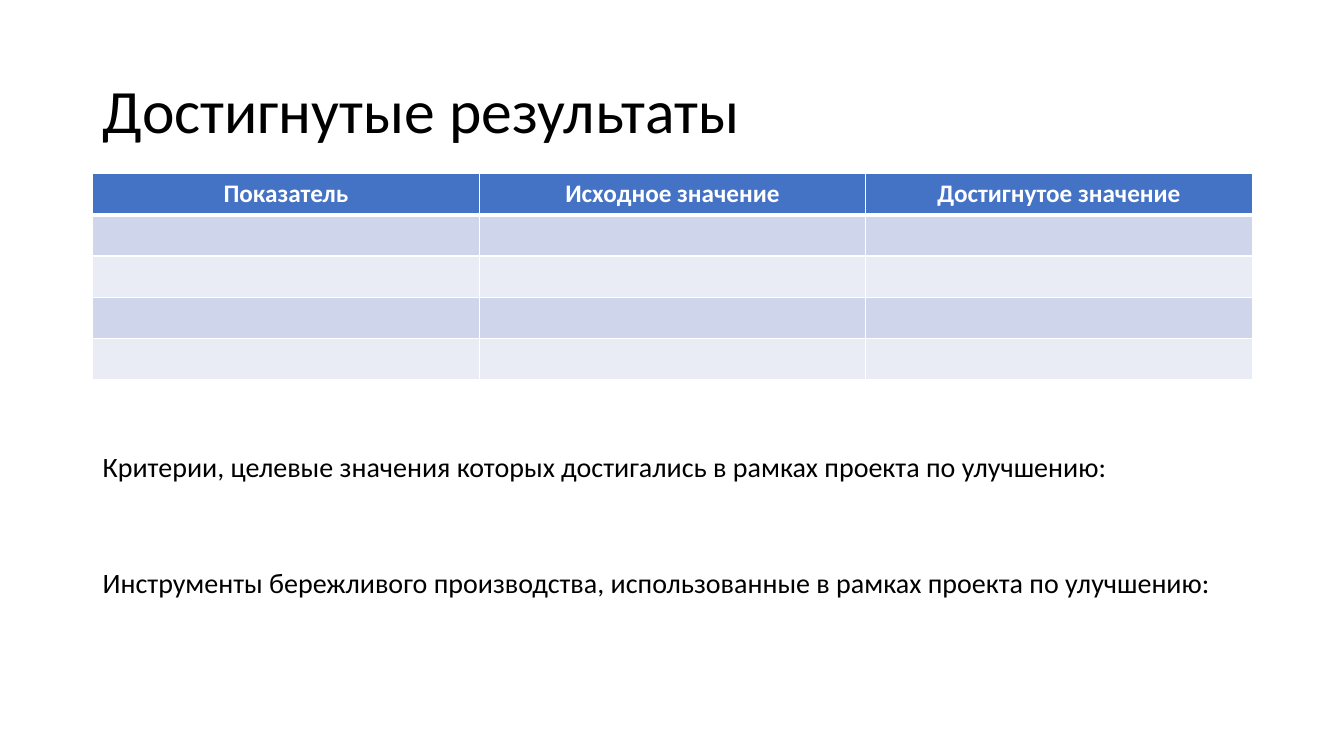
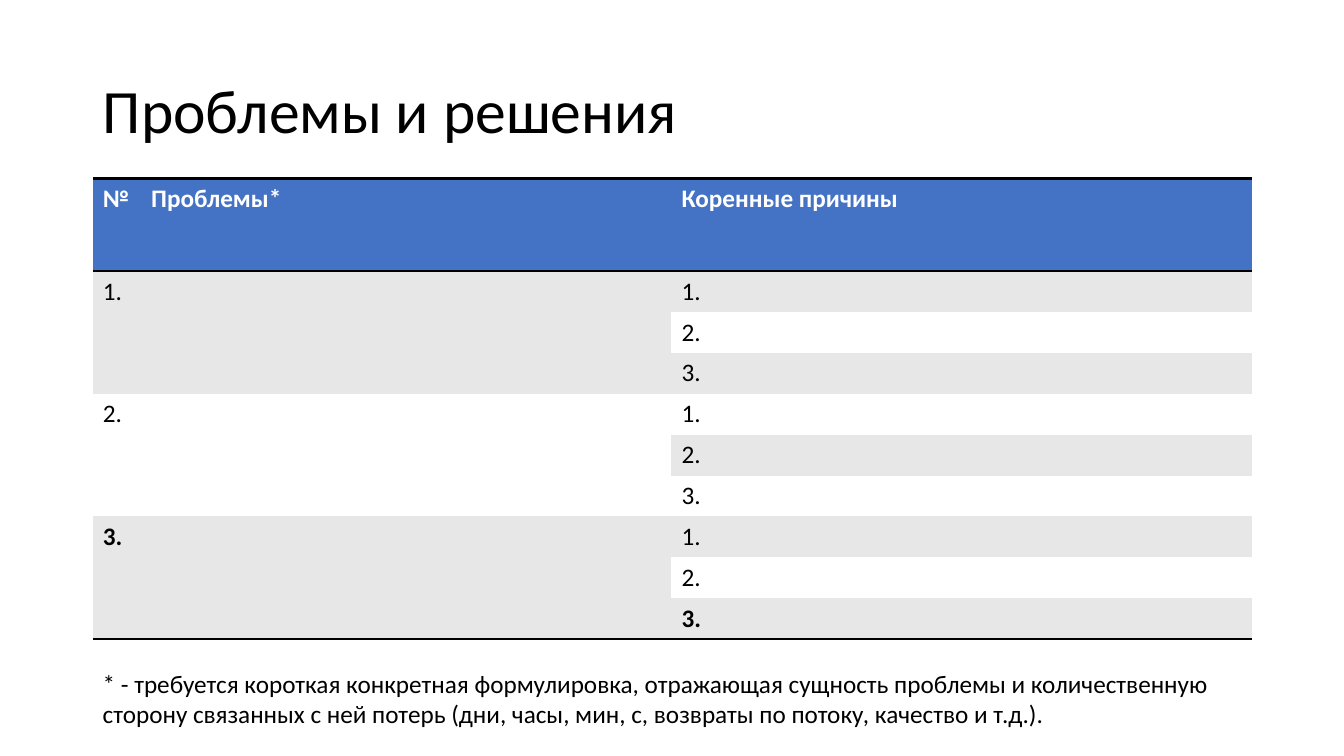
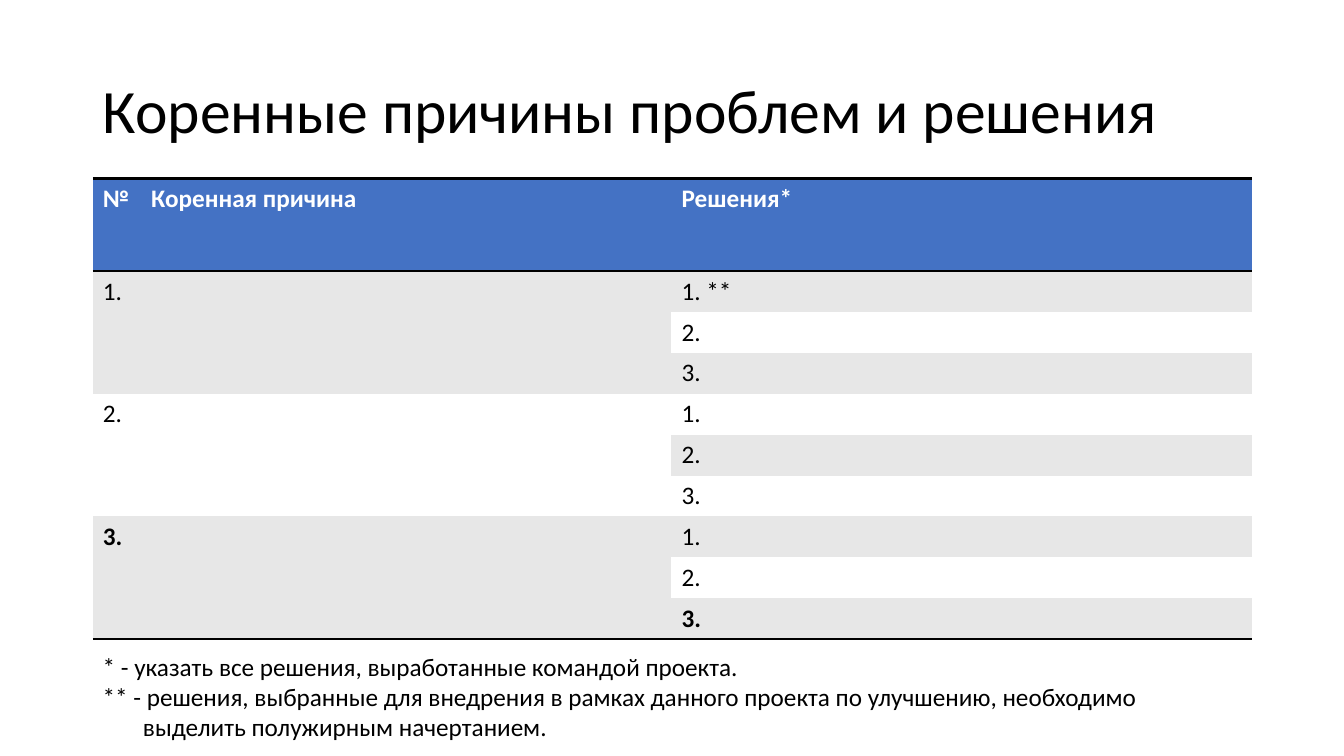
from dataclasses import dataclass
from lxml.etree import SubElement
from pptx import Presentation
from pptx.dml.color import RGBColor
from pptx.enum.text import MSO_ANCHOR, MSO_AUTO_SIZE, PP_ALIGN
from pptx.oxml.ns import qn
from pptx.util import Inches, Pt


@dataclass(frozen=True)
class Theme:
    font: str = "Calibri"
    black: str = "000000"
    white: str = "FFFFFF"
    blue: str = "4472C4"
    gray: str = "E7E7E7"
    band: tuple = ("CFD5EA", "E9EBF5")
    title: int = 44
    lead: int = 20
    text: int = 18
    left: float = 0.92
    width: float = 11.5
    plain: str = "{2D5ABB26-0587-4C30-8999-92F81FD0307C}"


T = Theme()

# Content
RESULTS = {
    "title": "Достигнутые результаты",
    "head": ["Показатель", "Исходное значение", "Достигнутое значение"],
    "rows": 4,
    "notes": [
        (4.41, 0.77, "Критерии, целевые значения которых достигались "
                     "в рамках проекта по улучшению:"),
        (5.56, 0.44, "Инструменты бережливого производства, использованные "
                     "в рамках проекта по улучшению:"),
    ],
}
CAUSES = [
    {
        "title": "Проблемы и решения",
        "head": ["№", "Проблемы*", "Коренные причины"],
        "first": "1.",
        "note": (6.58, 0.71, [
            ("* - требуется короткая конкретная формулировка, отражающая "
             "сущность проблемы и количественную сторону связанных с ней "
             "потерь (дни, часы, мин, с, возвраты по потоку, качество и т.д.).",
             0)]),
    },
    {
        "title": "Коренные причины проблем и решения",
        "head": ["№", "Коренная причина", "Решения*"],
        "first": "1. **",
        "note": (6.41, 1.01, [
            ("* - указать все решения, выработанные командой проекта.", 0),
            ("** - решения, выбранные для внедрения в рамках данного проекта "
             "по улучшению, необходимо выделить полужирным начертанием.",
             0.4)]),
    },
]
GROUPS, STEPS = 3, 3


# Shared helpers
def style(par, size, color=T.black, bold=False, **form):
    look = {"name": T.font, "size": Pt(size), "bold": bold}
    for run in par.runs:
        for key, val in look.items():
            setattr(run.font, key, val)
        run.font.color.rgb = RGBColor.from_string(color)
    for key, val in form.items():
        setattr(par, key, val)


def place(shape, top, height):
    spot = {"left": T.left, "top": top, "width": T.width, "height": height}
    for key, val in spot.items():
        setattr(shape, key, Inches(val))


def start(deck, text):
    slide = deck.slides.add_slide(deck.slide_layouts[5])
    title = slide.shapes.title
    place(title, 0.4, 1.45)
    frame = title.text_frame
    frame.text = text
    frame.vertical_anchor = MSO_ANCHOR.MIDDLE
    frame.auto_size = MSO_AUTO_SIZE.NONE
    style(frame.paragraphs[0], T.title, alignment=PP_ALIGN.LEFT,
          line_spacing=0.9)
    return slide


def note(slide, top, height, lines, size):
    box = slide.shapes.add_textbox(0, 0, 0, 0)
    place(box, top, height)
    frame = box.text_frame
    frame.word_wrap = True
    frame.text = "\n".join(text for text, _ in lines)
    for par, (_, hang) in zip(frame.paragraphs, lines):
        style(par, size)
        if hang:
            props = par._p.get_or_add_pPr()
            props.set("marL", str(Inches(hang)))
            props.set("indent", str(-Inches(hang)))


def table(slide, top, cols, rows):
    size = (len(rows), len(cols))
    frame = slide.shapes.add_table(
        *size, Inches(T.left), Inches(top), Inches(T.width), Inches(sum(rows)))
    grid = frame.table
    grid.first_row = grid.horz_banding = False
    grid._tbl.tblPr.find(qn("a:tableStyleId")).text = T.plain
    for col, wide in zip(grid.columns, cols):
        col.width = Inches(wide)
    for row, high in zip(grid.rows, rows):
        row.height = Inches(high)
    return grid


def paint(cell, fill, edges, color=T.black):
    cell.fill.solid()
    cell.fill.fore_color.rgb = RGBColor.from_string(fill)
    props = cell._tc.get_or_add_tcPr()
    # Borders stand before the fill, in the order L R T B
    sides = [side for side in "LRTB" if side in edges]
    for spot, side in enumerate(sides):
        line = SubElement(props, qn(f"a:ln{side}"), w=str(Pt(edges[side])))
        SubElement(SubElement(line, qn("a:solidFill")), qn("a:srgbClr"),
                   val=color)
        props.insert(spot, line)


def write(cell, text, color=T.black, bold=False, **form):
    cell.text = text
    style(cell.text_frame.paragraphs[0], T.text, color, bold, **form)


# Slide kinds
def results(deck, data):
    slide = start(deck, data["title"])
    head, count = data["head"], data["rows"]
    grid = table(slide, 1.72, [T.width / len(head)] * len(head),
                 [0.41] * (count + 1))
    for col, text in enumerate(head):
        write(grid.cell(0, col), text, T.white, True,
              alignment=PP_ALIGN.CENTER)
        for row in range(count + 1):
            fill = T.band[(row - 1) % 2] if row else T.blue
            edges = {"L": 1, "R": 1, "T": 3 if row == 1 else 1,
                     "B": 1 if row else 3}
            paint(grid.cell(row, col), fill, edges, T.white)
    for top, height, text in data["notes"]:
        note(slide, top, height, [(text, 0)], T.lead)


def causes(deck, data):
    slide = start(deck, data["title"])
    last = GROUPS * STEPS
    grid = table(slide, 1.77, [0.48, 5.26, 5.76], [0.92] + [0.4] * last)
    for col, text in enumerate(data["head"]):
        paint(grid.cell(0, col), T.blue, {"T": 2, "B": 2})
        write(grid.cell(0, col), text, T.white, True)
    for row in range(1, last + 1):
        group, step = divmod(row - 1, STEPS)
        final = group == GROUPS - 1
        for col in range(3):
            order = row - 1 if col == 2 else group
            ends = row == last or (final and col < 2)
            paint(grid.cell(row, col), T.white if order % 2 else T.gray,
                  {"B": 2} if ends else {})
        text = data["first"] if row == 1 else f"{step + 1}."
        write(grid.cell(row, 2), text, bold=row == last)
        if step == 0:
            write(grid.cell(row, 0), f"{group + 1}.", bold=final)
            for col in range(2):
                grid.cell(row, col).merge(grid.cell(row + STEPS - 1, col))
    note(slide, *data["note"], T.text)


def main():
    deck = Presentation()
    deck.slide_width, deck.slide_height = Inches(13.33), Inches(7.5)
    results(deck, RESULTS)
    for data in CAUSES:
        causes(deck, data)
    deck.save("out.pptx")


if __name__ == "__main__":
    main()
